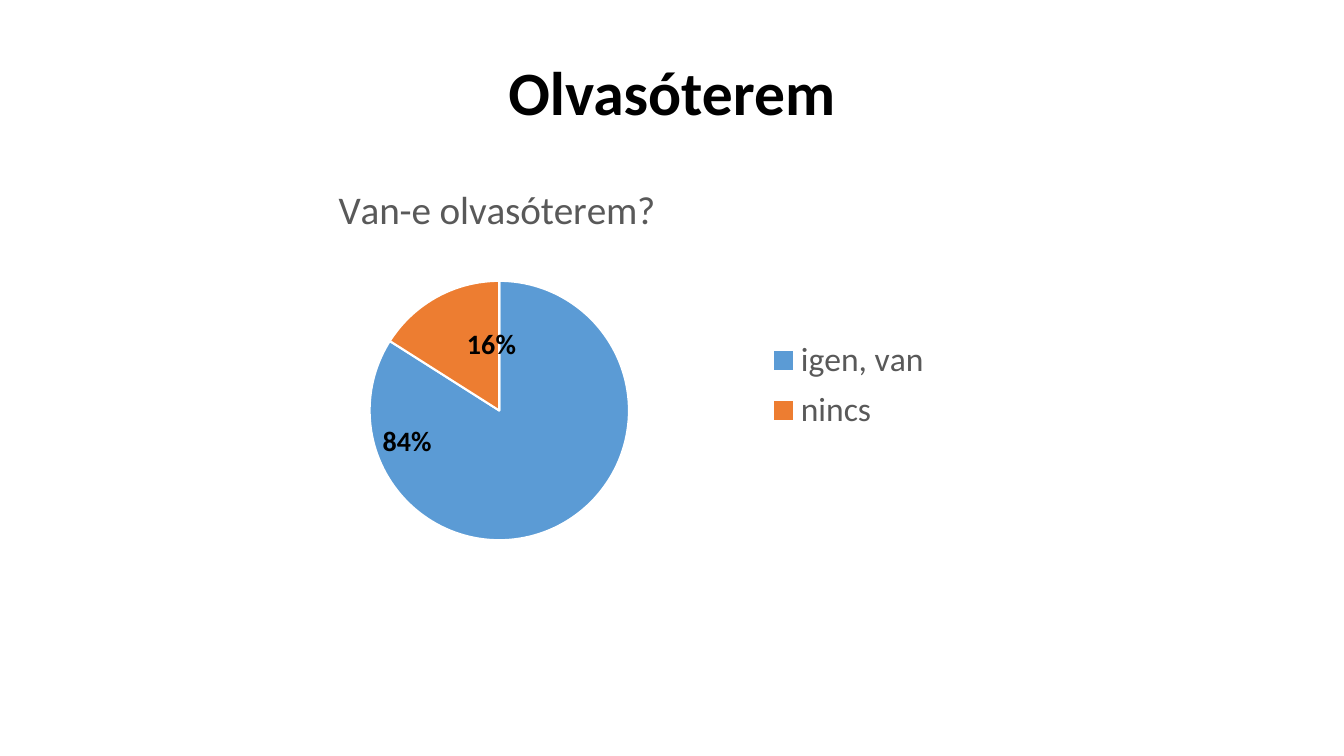
from lxml import etree
from pptx import Presentation
from pptx.chart.data import CategoryChartData
from pptx.dml.color import RGBColor
from pptx.enum.chart import XL_CHART_TYPE, XL_LABEL_POSITION, XL_LEGEND_POSITION
from pptx.enum.text import MSO_ANCHOR, PP_ALIGN
from pptx.oxml.ns import qn
from pptx.util import Cm, Pt

PIE = XL_CHART_TYPE.PIE
INSIDE_END = XL_LABEL_POSITION.INSIDE_END
LEGEND_BOTTOM = XL_LEGEND_POSITION.BOTTOM
MIDDLE = MSO_ANCHOR.MIDDLE
CENTER = PP_ALIGN.CENTER


class SlideBuilder:
    font_name = "Calibri"
    colors = {"text": "000000", "muted": "595959", "line": "FFFFFF",
              "yes": "5B9BD5", "no": "ED7D31"}

    def __init__(self, page):
        self.page = page

    def color(self, name):
        return RGBColor.from_string(self.colors[name])

    def style(self, font, size, color, bold=False):
        font.name = self.font_name
        font.size = Pt(size)
        font.bold = bold
        font.color.rgb = self.color(color)

    def heading(self, text, left, top, width, height):
        box = self.page.shapes.add_textbox(Cm(left), Cm(top), Cm(width), Cm(height))
        frame = box.text_frame
        frame.word_wrap = True
        frame.vertical_anchor = MIDDLE
        frame.text = text
        para = frame.paragraphs[0]
        para.alignment = CENTER
        para.line_spacing = 0.9
        self.style(para.runs[0].font, 44, "text", bold=True)

    def place(self, parent, index, **fractions):
        for old in parent.findall(qn("c:layout")):
            parent.remove(old)
        layout = etree.Element(qn("c:layout"))
        manual = etree.SubElement(layout, qn("c:manualLayout"))
        if parent.tag == qn("c:plotArea"):
            etree.SubElement(manual, qn("c:layoutTarget")).set("val", "inner")
        if parent.tag != qn("c:dLbl"):
            for mode in ("xMode", "yMode"):
                etree.SubElement(manual, qn(f"c:{mode}")).set("val", "edge")
        for name, value in fractions.items():
            etree.SubElement(manual, qn(f"c:{name}")).set("val", str(value))
        parent.insert(index, layout)

    def pie(self, title, slices, left, top, width, height):
        data = CategoryChartData()
        data.categories = [name for name, *_ in slices]
        data.add_series("Series 1", [value for _, value, *_ in slices])
        chart = self.page.shapes.add_chart(
            PIE, Cm(left), Cm(top), Cm(width), Cm(height), data).chart
        self.style(chart.font, 10, "text")

        chart.has_title = True
        frame = chart.chart_title.text_frame
        frame.text = title
        self.style(frame.paragraphs[0].runs[0].font, 28, "muted")

        chart.has_legend = True
        chart.legend.position = LEGEND_BOTTOM
        chart.legend.include_in_layout = False
        self.style(chart.legend.font, 24, "muted")

        plot = chart.plots[0]
        plot.vary_by_categories = True
        series = plot.series[0]
        labels = series.data_labels
        labels.show_value = False
        labels.show_percentage = True
        labels.position = INSIDE_END
        self.style(labels.font, 20, "text", bold=True)

        for index, (_, _, color, shift_x, shift_y) in enumerate(slices):
            point = series.points[index]
            point.format.fill.solid()
            point.format.fill.fore_color.rgb = self.color(color)
            point.format.line.color.rgb = self.color("line")
            point.format.line.width = Pt(1.5)
            label = point.data_label
            label.position = INSIDE_END
            self.style(label.font, 20, "text", bold=True)

        for item, (_, _, _, shift_x, shift_y) in zip(
                chart.element.iter(qn("c:dLbl")), slices):
            item.find(qn("c:showVal")).set("val", "0")
            item.find(qn("c:showPercent")).set("val", "1")
            self.place(item, 1, x=shift_x, y=shift_y)

        area = chart.element.find(qn("c:chart"))
        self.place(area.find(qn("c:title")), 1, x=0.32, y=0.05)
        self.place(area.find(qn("c:plotArea")), 0, x=0.36, y=0.26, w=0.29, h=0.52)
        self.place(area.find(qn("c:legend")), 1, x=0.79, y=0.36, w=0.2, h=0.22)


def main():
    deck = Presentation()
    deck.slide_width = Cm(33.87)
    deck.slide_height = Cm(19.05)
    builder = SlideBuilder(deck.slides.add_slide(deck.slide_layouts[6]))
    builder.heading("Olvasóterem", 2.33, 1.01, 29.21, 2.8)
    builder.pie("Van-e olvasóterem?",
                [("igen, van", 84, "yes", -0.14, -0.12),
                 ("nincs", 16, "no", 0.03, 0.05)],
                1.04, 3.81, 22.86, 12.57)
    deck.save("out.pptx")


if __name__ == "__main__":
    main()
